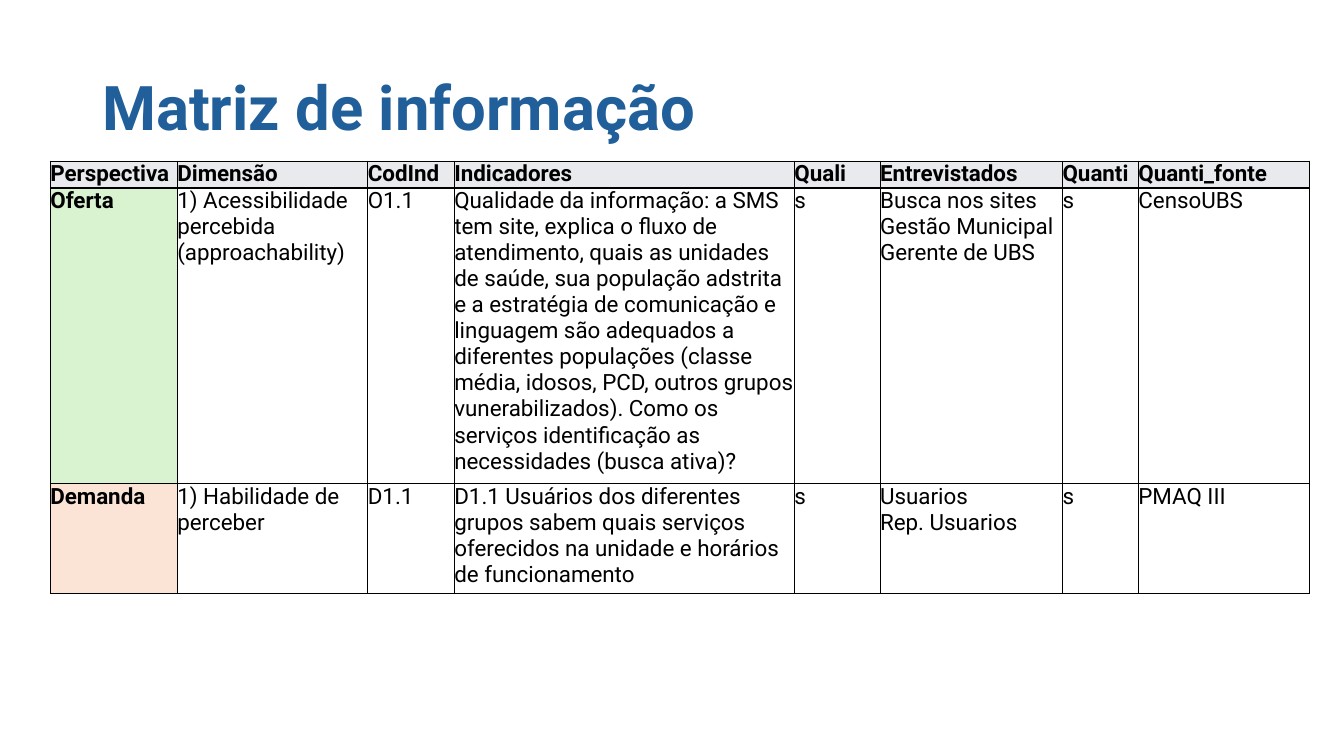
from dataclasses import dataclass

from lxml import etree
from pptx import Presentation
from pptx import util as u
from pptx.dml.color import RGBColor
from pptx.enum import text
from pptx.oxml import ns

FONT = "Roboto"
BLACK = "000000"
HEADER_FILL = "E8EAED"


@dataclass(frozen=True)
class Column:
    heading: str
    width: float
    centred: bool = False


@dataclass(frozen=True)
class Perspective:
    fill: str
    height: float
    values: tuple[str, ...]


COLUMNS = [
    Column("Perspectiva", 3.2),
    Column("Dimensão", 4.8),
    Column("CodInd", 2.18),
    Column("Indicadores", 8.57),
    Column("Quali", 2.16),
    Column("Entrevistados", 4.6),
    Column("Quanti", 1.91),
    Column("Quanti_fonte", 4.32),
]

PERSPECTIVES = [
    Perspective("D9F2D0", 6, (
        "Oferta",
        "1) Acessibilidade percebida (approachability)",
        "O1.1",
        "Qualidade da informação: a SMS tem site, explica o fluxo de atendimento, "
        "quais as unidades de saúde, sua população adstrita e a estratégia de "
        "comunicação e linguagem são adequados a diferentes populações (classe "
        "média, idosos, PCD, outros grupos vunerabilizados). Como os serviços "
        "identificação as necessidades (busca ativa)?",
        "s",
        "Busca nos sites\nGestão Municipal\nGerente de UBS",
        "s",
        "CensoUBS",
    )),
    Perspective("FBE3D6", 2.77, (
        "Demanda",
        "1) Habilidade de perceber",
        "D1.1",
        "D1.1 Usuários dos diferentes grupos sabem quais serviços oferecidos na "
        "unidade e horários de funcionamento",
        "s",
        "Usuarios\nRep. Usuarios",
        "s",
        "PMAQ III",
    )),
]


def rgb(value: str) -> RGBColor:
    return RGBColor.from_string(value)


def add_run(p, words: str, size: float, color: str, bold: bool) -> None:
    r = p.add_run()
    r.text = words
    r.font.name = FONT
    r.font.size = u.Pt(size)
    r.font.bold = bold
    r.font.color.rgb = rgb(color)


def add_borders(cell) -> None:
    props = cell._tc.get_or_add_tcPr()
    for side in ("lnL", "lnR", "lnT", "lnB"):
        line = etree.SubElement(props, ns.qn(f"a:{side}"), w=str(u.Pt(1)))
        fill = etree.SubElement(line, ns.qn("a:solidFill"))
        etree.SubElement(fill, ns.qn("a:srgbClr"), val=BLACK)


def fill_cell(cell, words: str, column: Column, bold: bool, fill: str | None) -> None:
    cell.margin_left = cell.margin_right = cell.margin_top = cell.margin_bottom = 0
    add_borders(cell)
    if fill:
        cell.fill.solid()
        cell.fill.fore_color.rgb = rgb(fill)
    else:
        cell.fill.background()
    p = cell.text_frame.paragraphs[0]
    p.alignment = text.PP_ALIGN.CENTER if column.centred else text.PP_ALIGN.LEFT
    for i, line in enumerate(words.split("\n")):
        if i:
            p.add_line_break()
        add_run(p, line, 16, BLACK, bold)


def add_title(s) -> None:
    tf = s.shapes.add_textbox(u.Cm(2.33), u.Cm(0.95), u.Cm(29.21), u.Cm(3.68)).text_frame
    tf.word_wrap = True
    tf.vertical_anchor = text.MSO_ANCHOR.MIDDLE
    p = tf.paragraphs[0]
    p.line_spacing = 0.9
    add_run(p, "Matriz de informação", 44, "215F9A", True)


def add_matrix(s) -> None:
    heights = [0.61] + [row.height for row in PERSPECTIVES]
    total_width = sum(column.width for column in COLUMNS)
    table = s.shapes.add_table(
        len(heights), len(COLUMNS), u.Cm(1.27), u.Cm(4.06), u.Cm(total_width), u.Cm(sum(heights))
    ).table
    table.first_row = table.horz_banding = False
    for row, height in zip(table.rows, heights):
        row.height = u.Cm(height)
    for c, column in enumerate(COLUMNS):
        table.columns[c].width = u.Cm(column.width)
        fill_cell(table.cell(0, c), column.heading, column, True, HEADER_FILL)
        for r, row in enumerate(PERSPECTIVES, start=1):
            is_label = c == 0
            fill = row.fill if is_label else None
            fill_cell(table.cell(r, c), row.values[c], column, is_label, fill)


def main() -> None:
    prs = Presentation()
    prs.slide_width, prs.slide_height = u.Cm(33.87), u.Cm(19.05)
    s = prs.slides.add_slide(prs.slide_layouts[6])
    add_title(s)
    add_matrix(s)
    prs.save("out.pptx")


if __name__ == "__main__":
    main()
